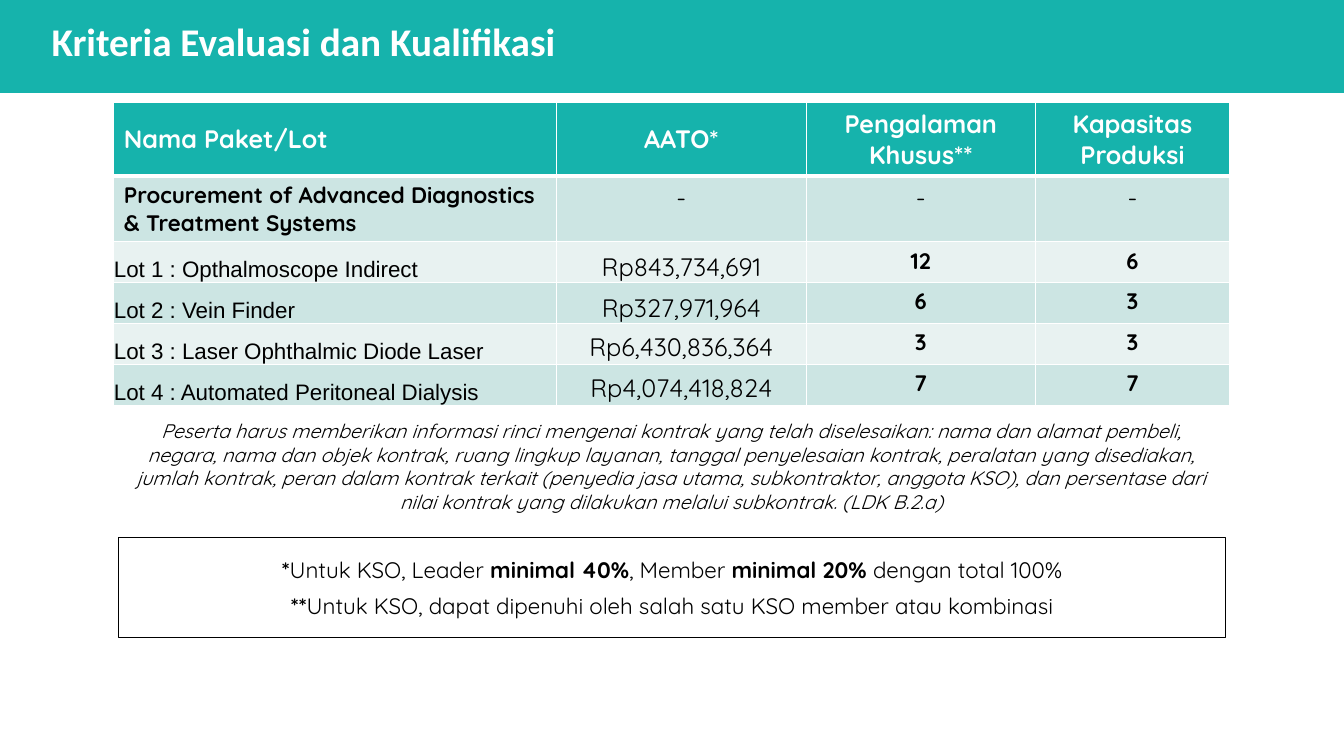
from dataclasses import dataclass

from lxml.etree import SubElement
from pptx import Presentation
from pptx.dml.color import RGBColor as Rgb
from pptx.enum.shapes import MSO_SHAPE as Shape
from pptx.enum.text import MSO_ANCHOR as Anchor, PP_ALIGN as Align
from pptx.oxml.ns import qn
from pptx.util import Cm, Pt


@dataclass(frozen=True)
class Theme:
    """Colours, fonts and type sizes of the slide."""
    teal: str = "16B3AC"
    mint: str = "CCE5E3"
    pale: str = "E8F2F1"
    white: str = "FFFFFF"
    black: str = "000000"
    main: str = "Quicksand"
    head: str = "Calibri"
    plain: str = "Arial"
    title: int = 28
    large: int = 18
    body: int = 16
    small: int = 14


THEME = Theme()
WIDTHS = (11.15, 6.3, 5.77, 4.9)
HEIGHTS = (1.85, 1.65) + (1.03,) * 4
HEADS = ("Nama Paket/Lot", "AATO*", "Pengalaman Khusus**", "Kapasitas Produksi")
PACK = ("Procurement of Advanced Diagnostics & Treatment Systems", "-", "-", "-")
LOTS = (
    ("Lot 1 : Opthalmoscope Indirect", "Rp843,734,691", "12", "6", 0),
    ("Lot 2 : Vein Finder", "Rp327,971,964", "6", "3", 0),
    ("Lot 3 : Laser Ophthalmic Diode Laser", "Rp6,430,836,364", "3", "3", 0.04),
    ("Lot 4 : Automated Peritoneal Dialysis", "Rp4,074,418,824", "7", "7", 0.04),
)
DETAIL = (
    "Peserta harus memberikan informasi rinci mengenai kontrak yang telah "
    "diselesaikan: nama dan alamat pembeli, negara, nama dan objek kontrak, "
    "ruang lingkup layanan, tanggal penyelesaian kontrak, peralatan yang "
    "disediakan, jumlah kontrak, peran dalam kontrak terkait (penyedia jasa "
    "utama, subkontraktor, anggota KSO), dan persentase dari nilai kontrak "
    "yang dilakukan melalui subkontrak. (LDK B.2.a)"
)
NOTES = (
    (("*", True), ("Untuk KSO, Leader ", False), ("minimal 40%", True),
     (", Member ", False), ("minimal 20% ", True), ("dengan total 100%", False)),
    (("**", True),
     ("Untuk KSO, dapat dipenuhi oleh salah satu KSO member atau kombinasi", False)),
)


def write(frame, text, size=THEME.body, font=THEME.main, color=THEME.black,
          bold=False, italic=False, align=Align.LEFT, gap=0, lead=None):
    """Fill a frame with a string or with paragraphs of (text, bold) runs."""
    paras = (((text, bold),),) if isinstance(text, str) else text
    for i, runs in enumerate(paras):
        para = frame.add_paragraph() if i else frame.paragraphs[0]
        para.alignment = align
        para.line_spacing = lead
        para.space_before = Pt(gap if i else 0)
        para.space_after = Pt(gap)
        for words, heavy in runs:
            run = para.add_run()
            run.text = words
            run.font.name, run.font.size = font, Pt(size)
            run.font.bold, run.font.italic = heavy, italic
            run.font.color.rgb = Rgb.from_string(color)


def inset(box, size):
    """Set the same margin on all four sides."""
    box.margin_left = box.margin_right = Cm(size)
    box.margin_top = box.margin_bottom = Cm(size)


def label(slide, place, text, pad=None, **style):
    """Add a wrapping text box."""
    frame = slide.shapes.add_textbox(*map(Cm, place)).text_frame
    frame.word_wrap = True
    if pad is not None:
        inset(frame, pad)
    write(frame, text, **style)


def block(slide, place, fill=None, line=None):
    """Add a rectangle with an optional fill and outline."""
    rect = slide.shapes.add_shape(Shape.RECTANGLE, *map(Cm, place))
    rect.shadow.inherit = False
    if fill:
        rect.fill.solid()
        rect.fill.fore_color.rgb = Rgb.from_string(fill)
    else:
        rect.fill.background()
    if line:
        rect.line.color.rgb = Rgb.from_string(line)
        rect.line.width = Pt(0.5)
    else:
        rect.line.fill.background()
    return rect


def edge(cell, base):
    """Draw white borders around a cell."""
    props = cell._tc.get_or_add_tcPr()
    for i, (side, width) in enumerate((("L", 1), ("R", 1), ("T", 1), ("B", base))):
        line = SubElement(props, qn(f"a:ln{side}"), w=str(Pt(width)))
        fill = SubElement(line, qn("a:solidFill"))
        SubElement(fill, qn("a:srgbClr"), val=THEME.white)
        props.insert(i, line)


def put(cell, text, fill, anchor=Anchor.TOP, pad=None, base=1, **style):
    """Fill and format one table cell."""
    cell.fill.solid()
    cell.fill.fore_color.rgb = Rgb.from_string(fill)
    cell.vertical_anchor = anchor
    if pad is not None:
        inset(cell, pad)
    edge(cell, base)
    write(cell.text_frame, text, **style)


def grid(slide):
    """Add the table of lots and their criteria."""
    place = map(Cm, (2.87, 2.59, sum(WIDTHS), sum(HEIGHTS)))
    table = slide.shapes.add_table(len(HEIGHTS), len(WIDTHS), *place).table
    table.first_row = table.horz_banding = False
    for col, width in zip(table.columns, WIDTHS):
        col.width = Cm(width)
    for row, height in zip(table.rows, HEIGHTS):
        row.height = Cm(height)
    for c, (head, pack) in enumerate(zip(HEADS, PACK)):
        align = Align.CENTER if c else Align.LEFT
        put(table.cell(0, c), head, THEME.teal, Anchor.MIDDLE, base=3,
            size=THEME.large, color=THEME.white, bold=True, align=align)
        put(table.cell(1, c), pack, THEME.mint,
            Anchor.TOP if c else Anchor.MIDDLE, bold=not c, align=align,
            size=THEME.large if c else THEME.body)
    for r, (name, price, skill, output, pad) in enumerate(LOTS, 2):
        fill = THEME.mint if r % 2 else THEME.pale
        put(table.cell(r, 0), name, fill, Anchor.BOTTOM, 0, font=THEME.plain)
        put(table.cell(r, 1), price, fill, Anchor.BOTTOM, pad,
            size=THEME.large, align=Align.CENTER)
        for c, count in enumerate((skill, output), 2):
            put(table.cell(r, c), count, fill, bold=True, align=Align.CENTER)


def main():
    """Build the slide and save it."""
    deck = Presentation()
    deck.slide_width, deck.slide_height = Cm(33.87), Cm(19.05)
    slide = deck.slides.add_slide(deck.slide_layouts[6])
    block(slide, (0, 0, 33.87, 2.34), fill=THEME.teal)
    label(slide, (1.3, 0.58, 16, 1.63), "Kriteria Evaluasi dan Kualifikasi",
          pad=0, size=THEME.title, font=THEME.head,
          color=THEME.white, bold=True, lead=0.9)
    grid(slide)
    frame = block(slide, (2.99, 13.55, 27.89, 2.51), line=THEME.black).text_frame
    frame.word_wrap = False
    frame.vertical_anchor = Anchor.MIDDLE
    inset(frame, 0)
    write(frame, NOTES, align=Align.CENTER, gap=3)
    label(slide, (2.92, 10.44, 28.02, 2.64), DETAIL, size=THEME.small,
          italic=True, align=Align.CENTER)
    deck.save("out.pptx")


if __name__ == "__main__":
    main()
